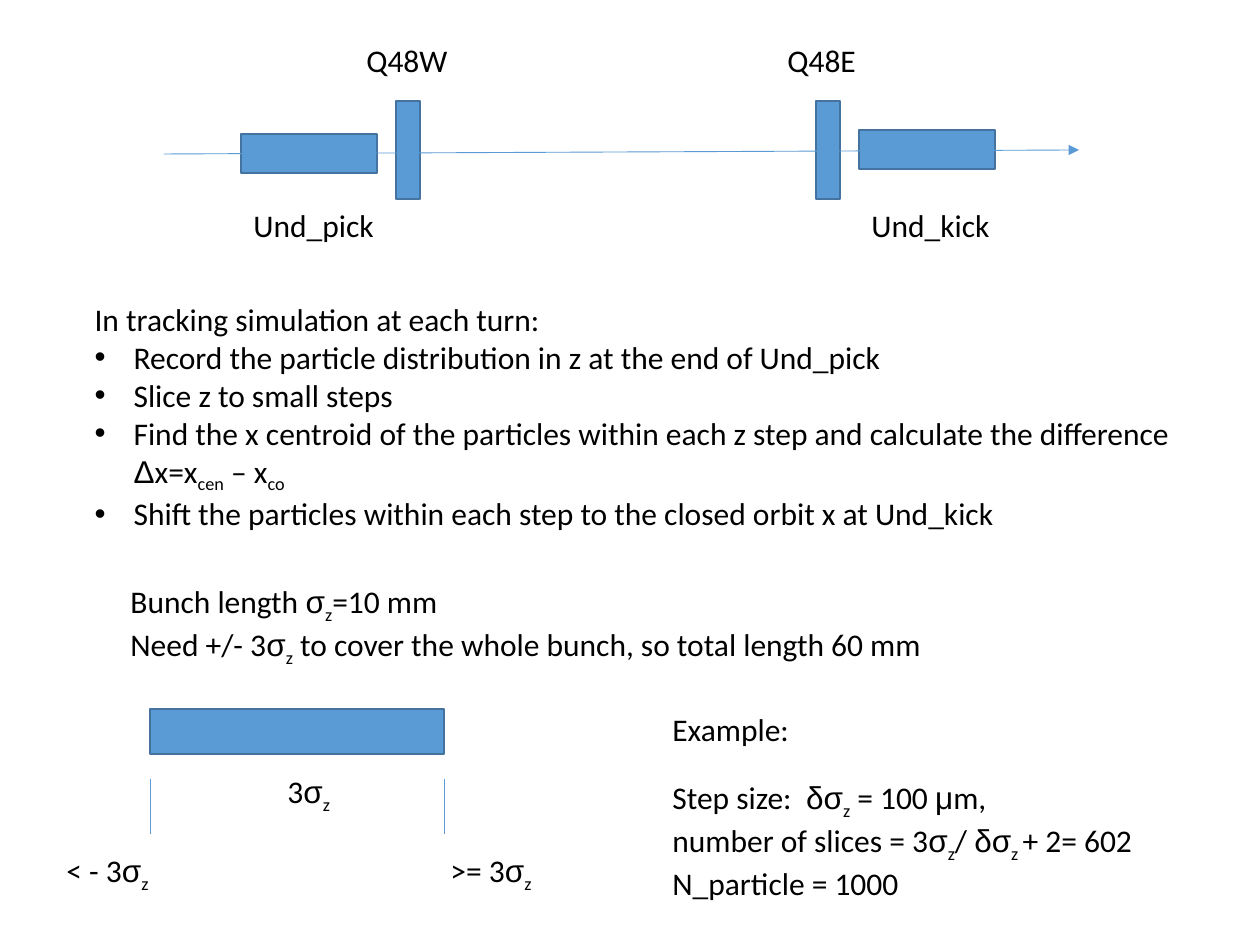
from typing import NamedTuple

from lxml.etree import SubElement
from pptx import Presentation
from pptx.dml.color import RGBColor
from pptx.enum.shapes import MSO_CONNECTOR, MSO_SHAPE
from pptx.enum.text import MSO_ANCHOR, MSO_AUTO_SIZE, PP_ALIGN
from pptx.oxml.ns import qn
from pptx.util import Emu, Pt

PIXELS_PER_INCH = 126
BLUE, DARK_BLUE, BLACK = "5B9BD5", "43739E", "000000"
BULLET_INDENT = 39


class Box(NamedTuple):
    left: int
    top: int
    width: int
    height: int


class Run(NamedTuple):
    text: str
    font: str = "Calibri"
    subscript: bool = False


class Label(NamedTuple):
    box: Box
    paragraphs: list[list[Run]]
    wrap: bool = True


class Line(NamedTuple):
    start_x: int
    start_y: int
    end_x: int
    end_y: int
    arrow: bool = False


def greek(text: str) -> Run:
    return Run(text, font="Arial")


def sub(text: str) -> Run:
    return Run(text, subscript=True)


SIGMA_Z = [greek("σ"), sub("z")]

# Beam line: quadrupoles and undulators, then the bunch bar
BARS = [
    Box(396, 101, 24, 98),
    Box(241, 134, 136, 39),
    Box(816, 101, 24, 98),
    Box(859, 130, 136, 39),
    Box(150, 709, 294, 45),
]
LINES = [
    Line(164, 154, 1079, 150, arrow=True),
    Line(150, 779, 150, 834),
    Line(444, 779, 444, 834),
]
LABELS = [
    Label(Box(354, 35, 107, 50), [[Run("Q48W")]], wrap=False),
    Label(Box(775, 35, 95, 50), [[Run("Q48E")]], wrap=False),
    Label(Box(241, 200, 147, 50), [[Run("Und_pick")]], wrap=False),
    Label(Box(859, 200, 145, 50), [[Run("Und_kick")]], wrap=False),
    Label(Box(118, 576, 827, 89), [
        [Run("Bunch length "), *SIGMA_Z, Run("=10 mm")],
        [Run("Need +/- 3"), *SIGMA_Z,
         Run(" to cover the whole bunch, so total length 60 mm")],
    ], wrap=False),
    Label(Box(54, 845, 130, 50), [[Run("< - 3"), *SIGMA_Z]]),
    Label(Box(438, 845, 130, 50), [[Run(">= 3"), *SIGMA_Z]]),
    Label(Box(275, 766, 130, 50), [[Run("3"), *SIGMA_Z]]),
    Label(Box(660, 772, 558, 127), [
        [Run("Step size:  "), greek("δσ"), sub("z"), Run(" = 100 "),
         greek("μ"), Run("m,")],
        [Run("number of slices = 3"), *SIGMA_Z, Run("/ "), greek("δσ"),
         sub("z "), Run("+ 2= 602")],
        [Run("N_particle = 1000")],
    ]),
    Label(Box(660, 704, 304, 50), [[Run("Example:")]]),
]
PROCEDURE = Label(Box(82, 294, 1123, 242), [
    [Run("In tracking simulation at each turn:")],
    [Run("Record the particle distribution in z at the end of Und_pick")],
    [Run("Slice z to small steps")],
    [Run("Find the x centroid of the particles within each z step and "
         "calculate the difference "), greek("Δ"), Run("x=x"), sub("cen"),
     Run(" – x"), sub("co")],
    [Run("Shift the particles within each step to the closed orbit x at Und_kick")],
])


def px(length: int) -> Emu:
    return Emu(round(length * 914400 / PIXELS_PER_INCH))


def color(value: str) -> RGBColor:
    return RGBColor.from_string(value)


def add_bar(slide, box: Box) -> None:
    shape = slide.shapes.add_shape(MSO_SHAPE.RECTANGLE, *map(px, box))
    shape.shadow.inherit = False
    shape.fill.solid()
    shape.fill.fore_color.rgb = color(BLUE)
    shape.line.color.rgb = color(DARK_BLUE)
    shape.line.width = Pt(1)


def add_line(slide, line: Line) -> None:
    connector = slide.shapes.add_connector(
        MSO_CONNECTOR.STRAIGHT, *map(px, line[:4]))
    connector.line.color.rgb = color(BLUE)
    connector.line.width = Pt(0.5)
    if line.arrow:
        SubElement(connector.line._get_or_add_ln(), qn("a:tailEnd"), type="triangle")
    SubElement(connector._element.spPr, qn("a:effectLst"))


def fill_text(text_frame, paragraphs: list[list[Run]]) -> None:
    for index, runs in enumerate(paragraphs):
        paragraph = text_frame.add_paragraph() if index else text_frame.paragraphs[0]
        paragraph.alignment = PP_ALIGN.LEFT
        paragraph.space_before = Pt(0)
        for item in runs:
            run = paragraph.add_run()
            run.text = item.text
            run.font.name = item.font
            run.font.size = Pt(18)
            run.font.color.rgb = color(BLACK)
            if item.subscript:
                run.font._element.set("baseline", "-25000")


def add_label(slide, label: Label) -> None:
    text_frame = slide.shapes.add_textbox(*map(px, label.box)).text_frame
    text_frame.word_wrap = label.wrap
    text_frame.auto_size = MSO_AUTO_SIZE.SHAPE_TO_FIT_TEXT
    fill_text(text_frame, label.paragraphs)


def set_bullet(paragraph, bulleted: bool) -> None:
    properties = paragraph._p.get_or_add_pPr()
    indent = px(BULLET_INDENT) if bulleted else 0
    properties.set("marL", str(indent))
    properties.set("indent", str(-indent))
    if bulleted:
        SubElement(properties, qn("a:buFont"), typeface="Arial")
        SubElement(properties, qn("a:buChar"), char="•")
    else:
        SubElement(properties, qn("a:buNone"))


def fill_body(body, label: Label) -> None:
    body.left, body.top, body.width, body.height = map(px, label.box)
    text_frame = body.text_frame
    text_frame.word_wrap = True
    text_frame.auto_size = MSO_AUTO_SIZE.SHAPE_TO_FIT_TEXT
    text_frame.vertical_anchor = MSO_ANCHOR.TOP
    fill_text(text_frame, label.paragraphs)
    for index, paragraph in enumerate(text_frame.paragraphs):
        set_bullet(paragraph, bulleted=index > 0)


def main() -> None:
    presentation = Presentation()
    presentation.slide_width, presentation.slide_height = px(1260), px(945)
    slide = presentation.slides.add_slide(presentation.slide_layouts[1])

    # The slide has a list but no title
    title = slide.shapes.title._element
    title.getparent().remove(title)
    fill_body(slide.placeholders[1], PROCEDURE)

    # Diagram, with the lines over the bars
    for bar in BARS:
        add_bar(slide, bar)
    for line in LINES:
        add_line(slide, line)
    for label in LABELS:
        add_label(slide, label)

    presentation.save("out.pptx")


if __name__ == "__main__":
    main()
